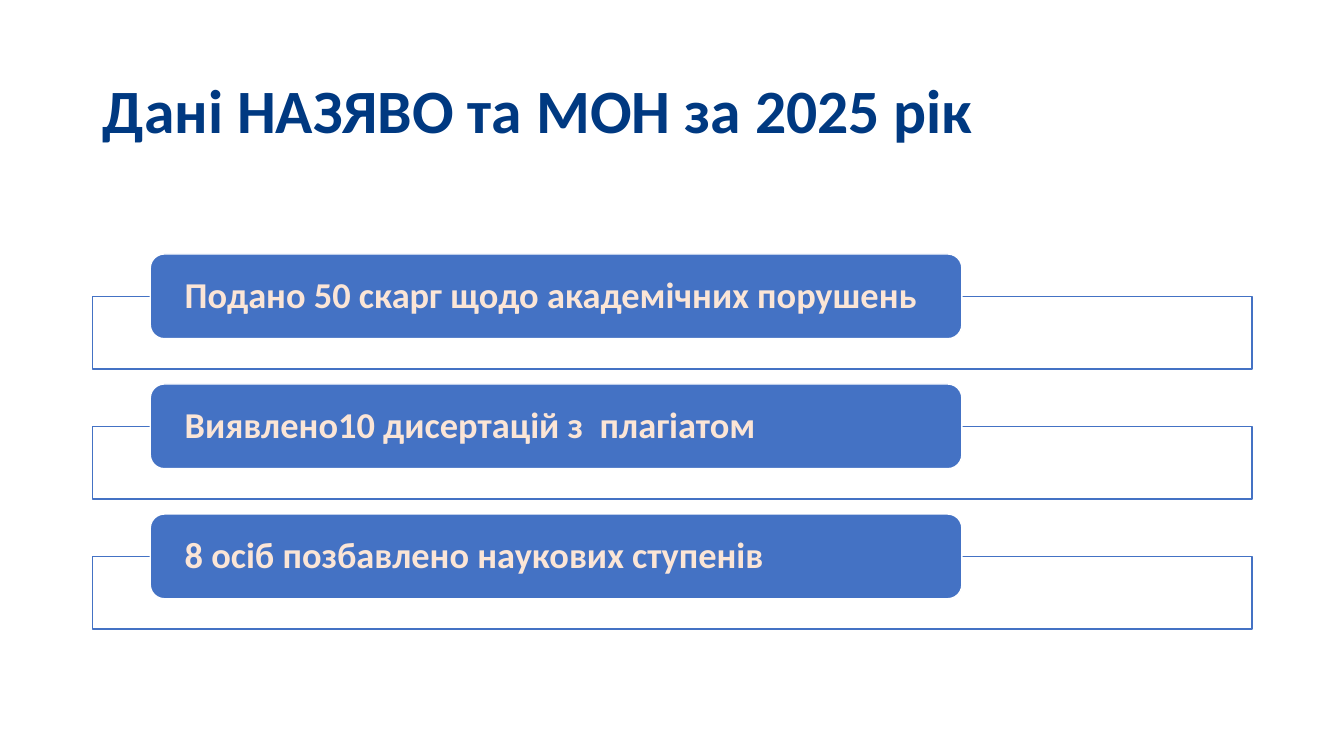
from dataclasses import dataclass

from lxml.etree import SubElement
from pptx import Presentation
from pptx.dml.color import RGBColor
from pptx.enum.shapes import MSO_SHAPE
from pptx.enum.text import MSO_ANCHOR, PP_ALIGN
from pptx.oxml.ns import qn
from pptx.util import Inches, Pt


@dataclass(frozen=True)
class Theme:
    """Colours, font and type sizes of the slide."""
    navy: RGBColor = RGBColor.from_string("003981")
    blue: RGBColor = RGBColor.from_string("4472C4")
    cream: RGBColor = RGBColor.from_string("FBE5D6")
    white: RGBColor = RGBColor.from_string("FFFFFF")
    font: str = "Calibri"
    title_size: int = 44
    fact_size: int = 26


@dataclass(frozen=True)
class Grid:
    """Column and row measures in inches."""
    left: float = 0.92
    width: float = 11.5
    title_top: float = 0.4
    title_height: float = 1.45
    label_left: float = 1.49
    label_width: float = 8.05
    label_height: float = 0.84
    first_row: float = 2.52
    row_step: float = 1.29
    frame_height: float = 0.72


THEME = Theme()
GRID = Grid()
HEADING = "Дані НАЗЯВО та МОН за 2025 рік"
FACTS = (
    "Подано 50 скарг щодо академічних порушень",
    "Виявлено10 дисертацій з  плагіатом",
    "8 осіб позбавлено наукових ступенів",
)


def write_line(frame, wording, size, colour, side_inset, end_inset):
    """Write one bold, left-aligned, vertically centred line."""
    frame.word_wrap = True
    frame.vertical_anchor = MSO_ANCHOR.MIDDLE
    frame.margin_left = frame.margin_right = Inches(side_inset)
    frame.margin_top = frame.margin_bottom = Inches(end_inset)
    paragraph = frame.paragraphs[0]
    paragraph.alignment = PP_ALIGN.LEFT
    paragraph.line_spacing = 0.9
    run = paragraph.add_run()
    run.text = wording
    run.font.name = THEME.font
    run.font.size = Pt(size)
    run.font.bold = True
    run.font.color.rgb = colour


def add_panel(slide, preset, left, top, width, height, fill, line):
    """Add a filled and outlined shape without a shadow."""
    panel = slide.shapes.add_shape(
        preset, Inches(left), Inches(top), Inches(width), Inches(height))
    panel.shadow.inherit = False
    panel.fill.solid()
    panel.fill.fore_color.rgb = fill
    panel.line.color.rgb = line
    panel.line.width = Pt(1)
    return panel


def set_opacity(panel, percent):
    """Set the opacity of a solid fill."""
    colour = panel.fill._xPr.find(qn("a:solidFill"))[0]
    SubElement(colour, qn("a:alpha"), val=str(percent * 1000))


def add_heading(slide):
    """Add the slide heading."""
    heading = slide.shapes.add_textbox(
        Inches(GRID.left), Inches(GRID.title_top),
        Inches(GRID.width), Inches(GRID.title_height))
    write_line(heading.text_frame, HEADING, THEME.title_size, THEME.navy, 0.1, 0.05)


def add_fact(slide, row, wording):
    """Add a framed row with its rounded label."""
    top = GRID.first_row + row * GRID.row_step
    frame = add_panel(
        slide, MSO_SHAPE.RECTANGLE, GRID.left, top + GRID.label_height / 2,
        GRID.width, GRID.frame_height, THEME.white, THEME.blue)
    set_opacity(frame, 90)
    label = add_panel(
        slide, MSO_SHAPE.ROUNDED_RECTANGLE, GRID.label_left, top,
        GRID.label_width, GRID.label_height, THEME.blue, THEME.white)
    write_line(label.text_frame, wording, THEME.fact_size, THEME.cream, 0.3, 0)


def main():
    """Build and save the slide."""
    deck = Presentation()
    deck.slide_width, deck.slide_height = Inches(13.33), Inches(7.5)
    slide = deck.slides.add_slide(deck.slide_layouts[6])
    add_heading(slide)
    for row, wording in enumerate(FACTS):
        add_fact(slide, row, wording)
    deck.save("out.pptx")


if __name__ == "__main__":
    main()
